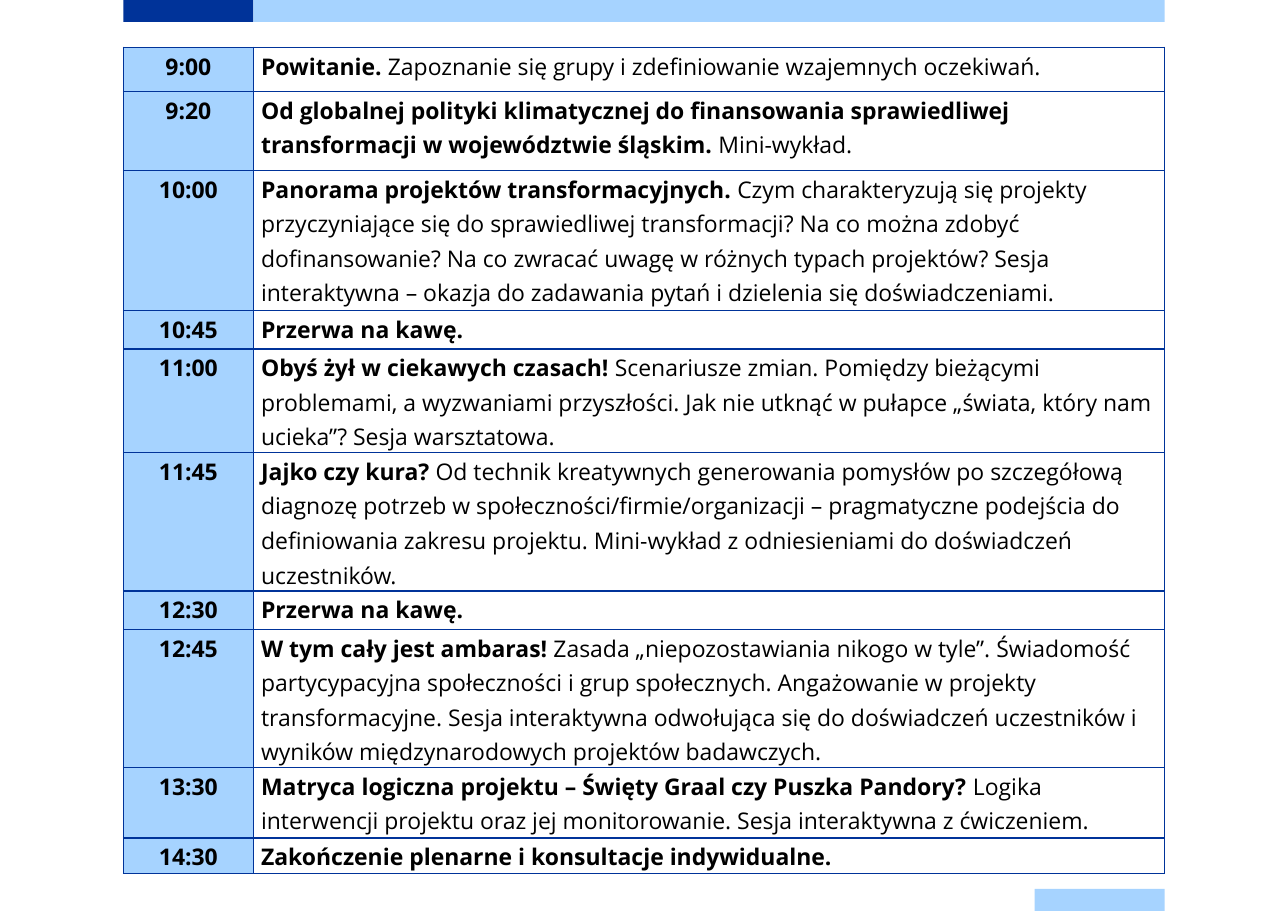
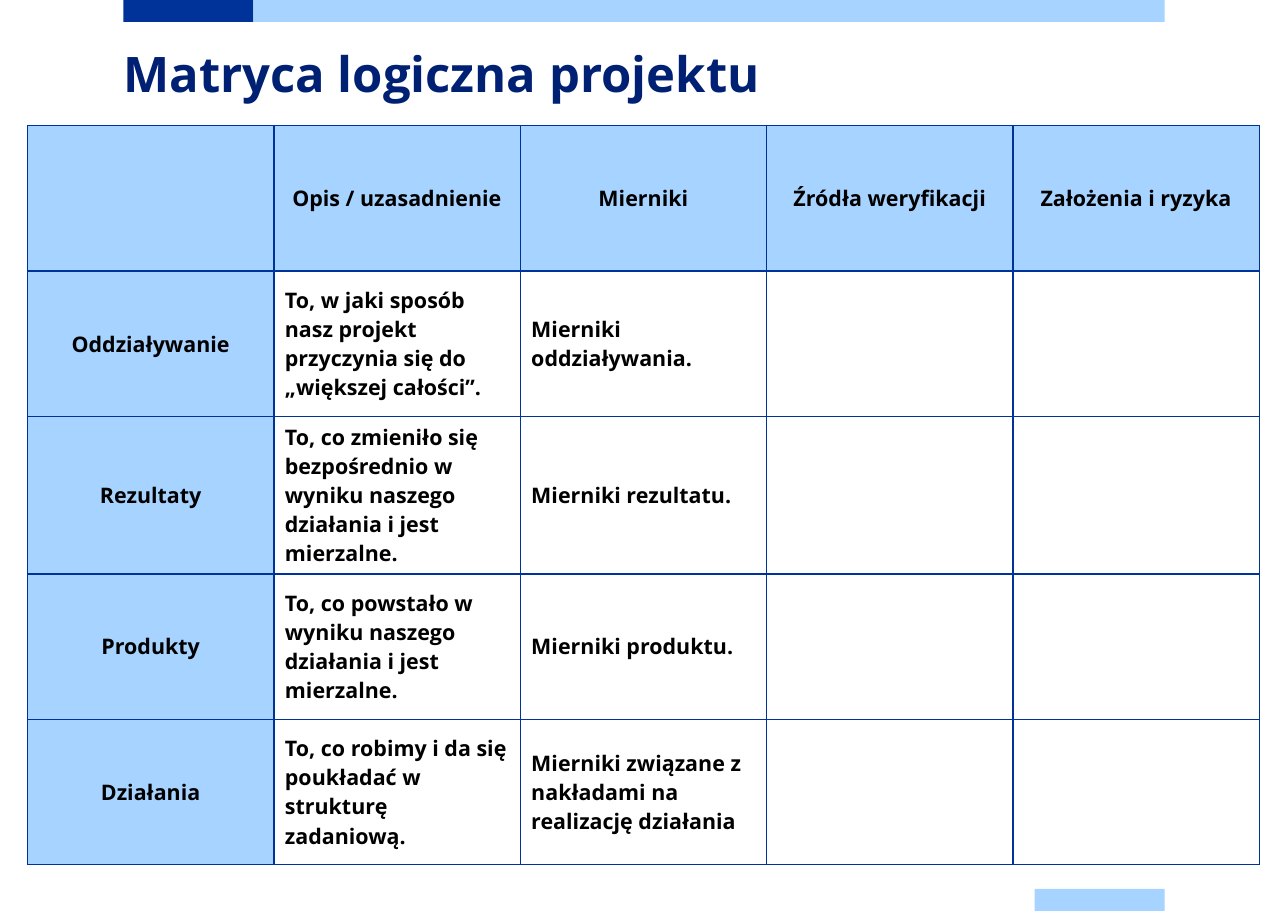
from pptx import Presentation
from pptx.dml.color import RGBColor
from pptx.enum import shapes, text
from pptx.oxml import parse_xml
from pptx.oxml.ns import nsdecls
from pptx.util import Inches, Pt

FONT = "Open Sans"
NAVY, BLUE, SKY = "002073", "003399", "A6D3FF"
BLACK, WHITE = "000000", "FFFFFF"
WIDTH, HEIGHT = 11.69, 8.27
LEFT, TOP, SPAN = 1.12, 0.43, 9.45    # content area
UNIT, BAND = 1.18, 0.2                # short band width, band height

AGENDA = [  # time, bold lead, plain text, row height
    ("9:00", "Powitanie.",
     " Zapoznanie się grupy i zdefiniowanie wzajemnych oczekiwań.", 0.4),
    ("9:20", "Od globalnej polityki klimatycznej do finansowania "
     "sprawiedliwej transformacji w województwie śląskim.",
     " Mini-wykład.", 0.72),
    ("10:00", "Panorama projektów transformacyjnych.",
     " Czym charakteryzują się projekty przyczyniające się do sprawiedliwej "
     "transformacji? Na co można zdobyć dofinansowanie? Na co zwracać uwagę "
     "w różnych typach projektów? Sesja interaktywna – okazja do zadawania "
     "pytań i dzielenia się doświadczeniami.", 1.27),
    ("10:45", "Przerwa na kawę.", "", 0.35),
    ("11:00", "Obyś żył w ciekawych czasach!",
     " Scenariusze zmian. Pomiędzy bieżącymi problemami, a wyzwaniami "
     "przyszłości. Jak nie utknąć w pułapce „świata, który nam ucieka”? "
     "Sesja warsztatowa.", 0.94),
    ("11:45", "Jajko czy kura?",
     " Od technik kreatywnych generowania pomysłów po szczegółową diagnozę "
     "potrzeb w społeczności/firmie/organizacji – pragmatyczne podejścia do "
     "definiowania zakresu projektu. Mini-wykład z odniesieniami do "
     "doświadczeń uczestników.", 1.25),
    ("12:30", "Przerwa na kawę.", "", 0.35),
    ("12:45", "W tym cały jest ambaras!",
     " Zasada „niepozostawiania nikogo w tyle”. Świadomość partycypacyjna "
     "społeczności i grup społecznych. Angażowanie w projekty "
     "transformacyjne. Sesja interaktywna odwołująca się do doświadczeń "
     "uczestników i wyników międzynarodowych projektów badawczych.", 1.25),
    ("13:30", "Matryca logiczna projektu – Święty Graal czy Puszka Pandory?",
     " Logika interwencji projektu oraz jej monitorowanie. Sesja "
     "interaktywna z ćwiczeniem.", 0.64),
    ("14:30", "Zakończenie plenarne i konsultacje indywidualne.", "", 0.32),
]

MATRIX = [  # cell texts, row height
    (("", "Opis / uzasadnienie", "Mierniki", "Źródła weryfikacji",
      "Założenia i ryzyka"), 1.32),
    (("Oddziaływanie", "To, w jaki sposób nasz projekt przyczynia się do "
      "„większej całości”.", "Mierniki oddziaływania.", "", ""), 1.32),
    (("Rezultaty", "To, co zmieniło się bezpośrednio w wyniku naszego "
      "działania i jest mierzalne.", "Mierniki rezultatu.", "", ""), 1.43),
    (("Produkty", "To, co powstało w wyniku naszego działania i jest "
      "mierzalne.", "Mierniki produktu.", "", ""), 1.32),
    (("Działania", "To, co robimy i da się poukładać w strukturę zadaniową.",
      "Mierniki związane z nakładami na realizację działania", "", ""), 1.32),
]


def paint(fmt, color):
    fmt.solid()
    fmt.fore_color.rgb = RGBColor.from_string(color)


def add_run(para, words, size, color=BLACK, bold=True):
    run = para.add_run()
    run.text = words
    font = run.font
    font.name, font.size, font.bold = FONT, Pt(size), bold
    font.color.rgb = RGBColor.from_string(color)


def add_bands(slide):
    """Two bands along the top edge, one at the bottom right."""
    right = LEFT + SPAN
    for x, y, width, color in (
            (LEFT, 0, UNIT, BLUE),
            (LEFT + UNIT, 0, SPAN - UNIT, SKY),
            (right - UNIT, HEIGHT - BAND, UNIT, SKY)):
        band = slide.shapes.add_shape(
            shapes.MSO_SHAPE.RECTANGLE, Inches(x), Inches(y),
            Inches(width), Inches(BAND))
        band.shadow.inherit = False
        paint(band.fill, color)
        band.line.fill.background()


def add_title(slide, words, x, y, width, height):
    box = slide.shapes.add_textbox(
        Inches(x), Inches(y), Inches(width), Inches(height))
    frame = box.text_frame
    frame.word_wrap = True
    frame.margin_left = frame.margin_right = 0
    frame.margin_top = frame.margin_bottom = 0
    para = frame.paragraphs[0]
    para.line_spacing = Pt(36)
    add_run(para, words, 32, NAVY)


def style_cell(cell, color):
    """Thin blue border on all sides, then the fill."""
    props = cell._tc.get_or_add_tcPr()
    for side in ("lnL", "lnR", "lnT", "lnB"):
        props.append(parse_xml(
            f'<a:{side} {nsdecls("a")} w="12700"><a:solidFill>'
            f'<a:srgbClr val="{BLUE}"/></a:solidFill></a:{side}>'))
    paint(cell.fill, color)


def add_grid(slide, x, y, cols, rows):
    """Bordered table whose first column is tinted."""
    table = slide.shapes.add_table(
        len(rows), len(cols), Inches(x), Inches(y),
        Inches(sum(cols)), Inches(sum(rows))).table
    table.first_row = table.horz_banding = False
    for col, width in zip(table.columns, cols):
        col.width = Inches(width)
    for row, height in zip(table.rows, rows):
        row.height = Inches(height)
        for i, cell in enumerate(row.cells):
            style_cell(cell, WHITE if i else SKY)
    return table


def add_agenda(slide, x, y, width):
    table = add_grid(slide, x, y, [UNIT, width - UNIT],
                     [item[-1] for item in AGENDA])
    for row, (time, lead, rest, _) in zip(table.rows, AGENDA):
        for cell in row.cells:
            cell.margin_left = cell.margin_right = Inches(0.07)
            cell.margin_top = cell.margin_bottom = 0
            cell.text_frame.paragraphs[0].line_spacing = 1.1
        hour, topic = (c.text_frame.paragraphs[0] for c in row.cells)
        hour.alignment = text.PP_ALIGN.CENTER
        add_run(hour, time, 15)
        add_run(topic, lead, 15)
        if rest:
            add_run(topic, rest, 15, bold=False)


def add_matrix(slide, x, y, width):
    count = len(MATRIX[0][0])
    table = add_grid(slide, x, y, [width / count] * count,
                     [height for _, height in MATRIX])
    for r, (line, _) in enumerate(MATRIX):
        for c, words in enumerate(line):
            cell = table.cell(r, c)
            cell.vertical_anchor = text.MSO_ANCHOR.MIDDLE
            if r == 0:
                paint(cell.fill, SKY)
            if words:
                para = cell.text_frame.paragraphs[0]
                if r == 0 or c == 0:
                    para.alignment = text.PP_ALIGN.CENTER
                add_run(para, words, 14)


def add_slide(deck):
    slide = deck.slides.add_slide(deck.slide_layouts[6])
    add_bands(slide)
    return slide


def main():
    deck = Presentation()
    deck.slide_width, deck.slide_height = Inches(WIDTH), Inches(HEIGHT)

    # Agenda
    add_agenda(add_slide(deck), LEFT, TOP, SPAN)

    # Logic matrix
    slide = add_slide(deck)
    add_title(slide, "Matryca logiczna projektu", LEFT, TOP, SPAN, 0.55)
    add_matrix(slide, 0.25, 1.14, 11.18)

    deck.save("out.pptx")


if __name__ == "__main__":
    main()
